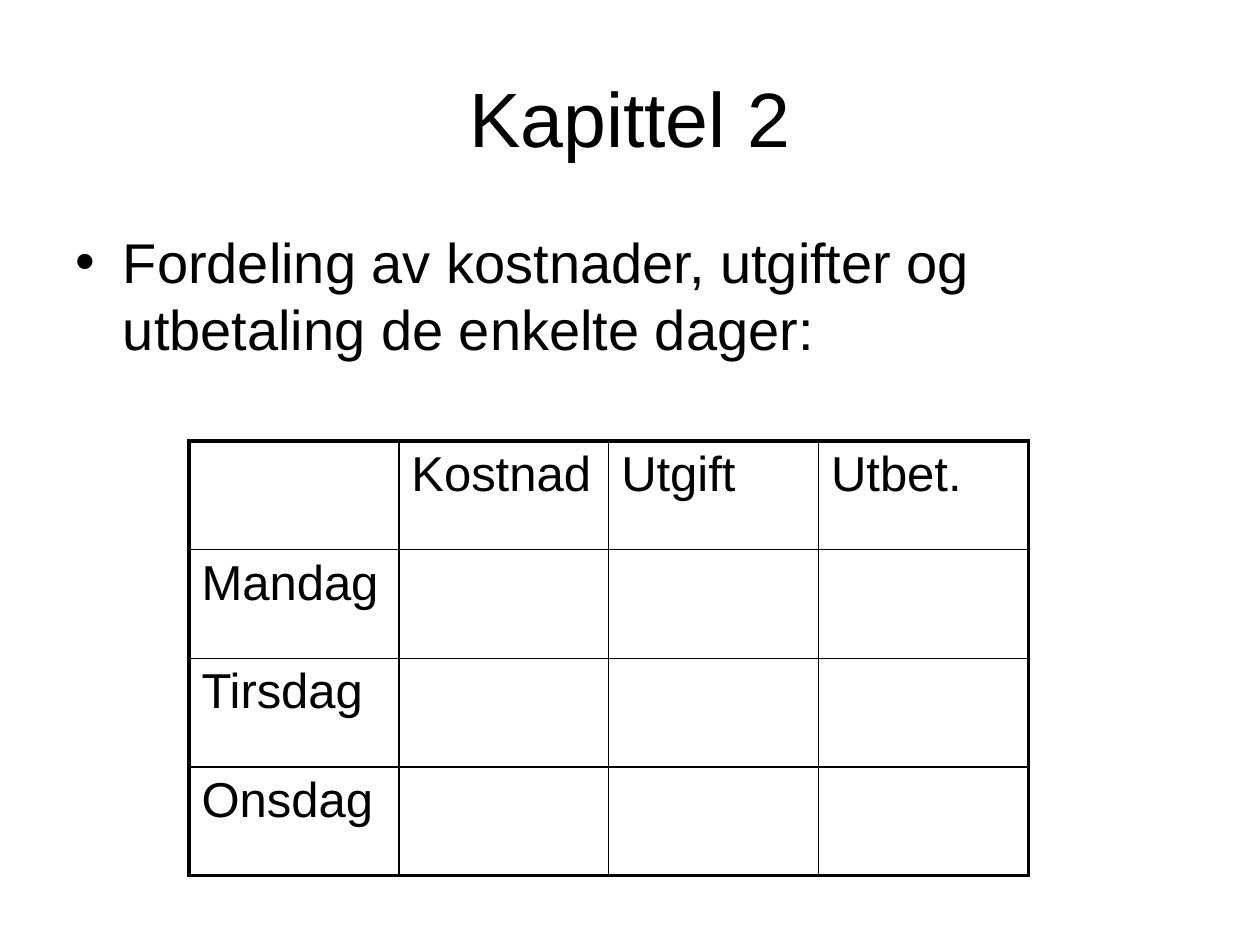
from dataclasses import dataclass

from lxml.etree import fromstring
from pptx import Presentation
from pptx.dml.color import RGBColor as RGB
from pptx.enum.text import MSO_ANCHOR as Anchor, PP_ALIGN as Align
from pptx.oxml.ns import nsdecls
from pptx.util import Cm, Pt

TITLE = "Kapittel 2"
BULLETS = ["Fordeling av kostnader, utgifter og utbetaling de enkelte dager:"]
COLUMNS = ["Kostnad", "Utgift", "Utbet."]
DAYS = ["Mandag", "Tirsdag", "Onsdag"]
ROWS = [["", *COLUMNS]] + [[day] + [""] * len(COLUMNS) for day in DAYS]


@dataclass(frozen=True)
class Theme:
    font: str = "Arial"
    ink: str = "000000"
    paper: str = "FFFFFF"
    title: int = 44
    body: int = 32
    cell: int = 28
    outer: float = 2.25
    inner: float = 1


T = Theme()


def place(sp, left, top, width, height):
    sp.left, sp.top, sp.width, sp.height = Cm(left), Cm(top), Cm(width), Cm(height)


def add_run(p, text, size):
    r = p.add_run()
    r.text = text
    r.font.name = T.font
    r.font.size = Pt(size)
    r.font.color.rgb = RGB.from_string(T.ink)


def set_borders(cell, outer_sides):
    tcPr = cell._tc.get_or_add_tcPr()
    for i, (side, is_outer) in enumerate(outer_sides.items()):
        width = Pt(T.outer if is_outer else T.inner)
        tcPr.insert(i, fromstring(
            f'<a:ln{side} {nsdecls("a")} w="{width}"><a:solidFill>'
            f'<a:srgbClr val="{T.ink}"/></a:solidFill></a:ln{side}>'))


def add_grid(s, rows, left, top, col_width, row_height):
    n_rows, n_cols = len(rows), len(rows[0])
    table = s.shapes.add_table(
        n_rows, n_cols, Cm(left), Cm(top),
        Cm(col_width * n_cols), Cm(row_height * n_rows)).table
    table.first_row = table.horz_banding = False
    for col in table.columns:
        col.width = Cm(col_width)
    for i, row in enumerate(rows):
        table.rows[i].height = Cm(row_height)
        for j, text in enumerate(row):
            cell = table.cell(i, j)
            cell.fill.background()
            set_borders(cell, {"L": j == 0, "R": j == n_cols - 1,
                               "T": i == 0, "B": i == n_rows - 1})
            if text:
                add_run(cell.text_frame.paragraphs[0], text, T.cell)


def main():
    prs = Presentation()
    prs.slide_width, prs.slide_height = Cm(25.4), Cm(19.05)
    s = prs.slides.add_slide(prs.slide_layouts[1])
    s.background.fill.solid()
    s.background.fill.fore_color.rgb = RGB.from_string(T.paper)

    title, body = s.placeholders
    place(title, 1.27, 0.76, 22.86, 3.18)
    title.text_frame.vertical_anchor = Anchor.MIDDLE
    p = title.text_frame.paragraphs[0]
    p.alignment = Align.CENTER
    add_run(p, TITLE, T.title)

    place(body, 1.27, 4.45, 22.86, 12.57)
    tf = body.text_frame
    for i, text in enumerate(BULLETS):
        p = tf.add_paragraph() if i else tf.paragraphs[0]
        add_run(p, text, T.body)

    add_grid(s, ROWS, left=3.81, top=8.89, col_width=4.23, row_height=2.19)
    prs.save("out.pptx")


if __name__ == "__main__":
    main()
